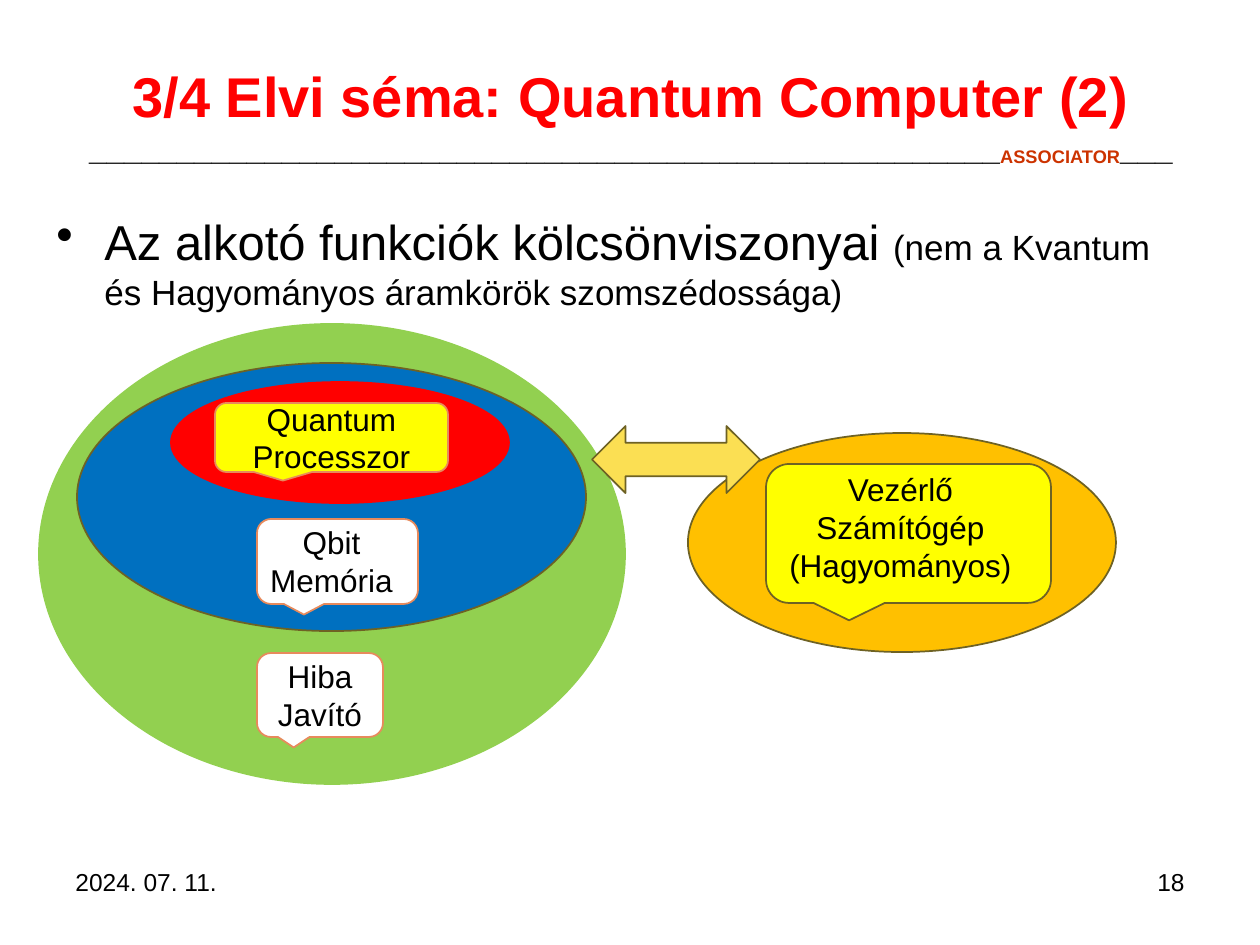
from dataclasses import dataclass

from lxml import etree
from pptx import Presentation
from pptx.dml.color import RGBColor
from pptx.enum.shapes import MSO_SHAPE
from pptx.enum.text import MSO_ANCHOR, PP_ALIGN
from pptx.oxml.ns import qn
from pptx.util import Emu, Pt

ELLIPSE = MSO_SHAPE.OVAL
CALLOUT = MSO_SHAPE.ROUNDED_RECTANGULAR_CALLOUT
DOUBLE_ARROW = MSO_SHAPE.LEFT_RIGHT_ARROW
LEFT, CENTER, RIGHT = PP_ALIGN.LEFT, PP_ALIGN.CENTER, PP_ALIGN.RIGHT
TOP, MIDDLE = MSO_ANCHOR.TOP, MSO_ANCHOR.MIDDLE

EMU_PER_INCH = 914400
PX_PER_INCH = 126
FONT = "Arial"
COLORS = {
    "black": "000000",
    "white": "FFFFFF",
    "red": "FF0000",
    "rust": "CC3300",
    "green": "92D050",
    "blue": "0070C0",
    "yellow": "FFFF00",
    "amber": "FFC000",
    "sand": "FBDF53",
    "olive": "6E6224",
    "salmon": "E78A5C",
}


@dataclass
class Box:
    left: int
    top: int
    width: int
    height: int


@dataclass
class Figure:
    preset: MSO_SHAPE
    box: Box
    fill: str
    line: str
    text: str = ""


@dataclass
class Label:
    box: Box
    text: str
    size: int = 18
    align: PP_ALIGN = LEFT
    wrap: bool = True


@dataclass
class Span:
    text: str
    size: int
    color: str = "black"
    bold: bool = False
    baseline: int = 0


QUANTUM_FIGURES = [
    Figure(ELLIPSE, Box(39, 324, 586, 460), "green", "green"),
    Figure(CALLOUT, Box(257, 653, 126, 84), "white", "salmon", "Hiba Javító"),
    Figure(ELLIPSE, Box(77, 363, 509, 268), "blue", "olive"),
    Figure(CALLOUT, Box(257, 519, 161, 85), "white", "salmon"),
    Figure(ELLIPSE, Box(171, 382, 338, 121), "red", "red"),
    Figure(CALLOUT, Box(215, 403, 233, 69), "yellow", "salmon", "Quantum\nProcesszor"),
]
CONTROL_FIGURES = [
    Figure(ELLIPSE, Box(688, 433, 428, 219), "amber", "olive"),
    Figure(CALLOUT, Box(766, 464, 285, 139), "yellow", "olive"),
]
LINK_ARROW = Figure(DOUBLE_ARROW, Box(592, 426, 168, 67), "sand", "olive")

MEMORY_LABEL = Label(Box(257, 517, 149, 89), "Qbit\nMemória", align=CENTER, wrap=False)
CONTROL_LABEL = Label(Box(776, 464, 249, 127), "Vezérlő\nSzámítógép\n(Hagyományos)",
                      align=CENTER, wrap=False)
FOOTERS = [
    Label(Box(63, 861, 294, 66), "2024. 07. 11.", size=14),
    Label(Box(903, 861, 294, 66), "18", size=14, align=RIGHT),
]

TITLE = [Span("3/4 Elvi séma: Quantum Computer (2)", 32, "red", True)]
TITLE_RULE = [
    Span("_" * 52, 18, bold=True),
    Span("ASSOCIATOR", 18, "rust", True, -10),
    Span("_" * 3, 18, bold=True),
]
BODY = [
    Span("Az alkotó funkciók kölcsönviszonyai ", 28),
    Span("(nem a Kvantum és Hagyományos áramkörök szomszédossága)", 20),
]


def px(count: int) -> Emu:
    return Emu(round(count * EMU_PER_INCH / PX_PER_INCH))


def edges(box: Box) -> list[Emu]:
    return [px(length) for length in (box.left, box.top, box.width, box.height)]


def color(name: str) -> RGBColor:
    return RGBColor.from_string(COLORS[name])


def style_font(font, size: int, color_name: str = "black", bold: bool = False) -> None:
    font.name = FONT
    font.size = Pt(size)
    font.bold = bold
    font.color.rgb = color(color_name)


def write_text(text_frame, text: str, size: int, align: PP_ALIGN) -> None:
    text_frame.text = text
    for paragraph in text_frame.paragraphs:
        paragraph.alignment = align
        for run in paragraph.runs:
            style_font(run.font, size)


def add_spans(paragraph, spans: list[Span]) -> None:
    for span in spans:
        run = paragraph.add_run()
        run.text = span.text
        style_font(run.font, span.size, span.color, span.bold)
        if span.baseline:
            run._r.get_or_add_rPr().set("baseline", str(span.baseline * 1000))


def add_text_frame(slide, box: Box, anchor: MSO_ANCHOR = TOP, wrap: bool = True):
    text_frame = slide.shapes.add_textbox(*edges(box)).text_frame
    text_frame.word_wrap = wrap
    text_frame.vertical_anchor = anchor
    return text_frame


def draw_figure(slide, figure: Figure) -> None:
    shape = slide.shapes.add_shape(figure.preset, *edges(figure.box))
    shape.shadow.inherit = False
    shape.fill.solid()
    shape.fill.fore_color.rgb = color(figure.fill)
    shape.line.color.rgb = color(figure.line)
    shape.line.width = Pt(1)
    if figure.text:
        shape.text_frame.vertical_anchor = MIDDLE
        write_text(shape.text_frame, figure.text, 18, CENTER)


def draw_label(slide, label: Label) -> None:
    text_frame = add_text_frame(slide, label.box, wrap=label.wrap)
    write_text(text_frame, label.text, label.size, label.align)


def draw_title(slide) -> None:
    text_frame = add_text_frame(slide, Box(64, 35, 1134, 158), MIDDLE)
    paragraph = text_frame.paragraphs[0]
    paragraph.alignment = CENTER
    add_spans(paragraph, TITLE)
    paragraph.add_line_break()
    add_spans(paragraph, TITLE_RULE)


def draw_body(slide) -> None:
    paragraph = add_text_frame(slide, Box(44, 205, 1134, 624)).paragraphs[0]
    paragraph.space_before = Pt(4)
    add_spans(paragraph, BODY)
    properties = paragraph._p.get_or_add_pPr()
    indent = px(48)
    properties.set("marL", str(indent))
    properties.set("indent", str(-indent))
    etree.SubElement(properties, qn("a:buChar")).set("char", "•")


def main() -> None:
    presentation = Presentation()
    presentation.slide_width = px(1260)
    presentation.slide_height = px(945)
    slide = presentation.slides.add_slide(presentation.slide_layouts[6])

    for figure in QUANTUM_FIGURES:
        draw_figure(slide, figure)
    draw_label(slide, MEMORY_LABEL)
    draw_body(slide)
    draw_title(slide)
    for figure in CONTROL_FIGURES:
        draw_figure(slide, figure)
    draw_label(slide, CONTROL_LABEL)
    draw_figure(slide, LINK_ARROW)
    for footer in FOOTERS:
        draw_label(slide, footer)

    presentation.save("out.pptx")


if __name__ == "__main__":
    main()
